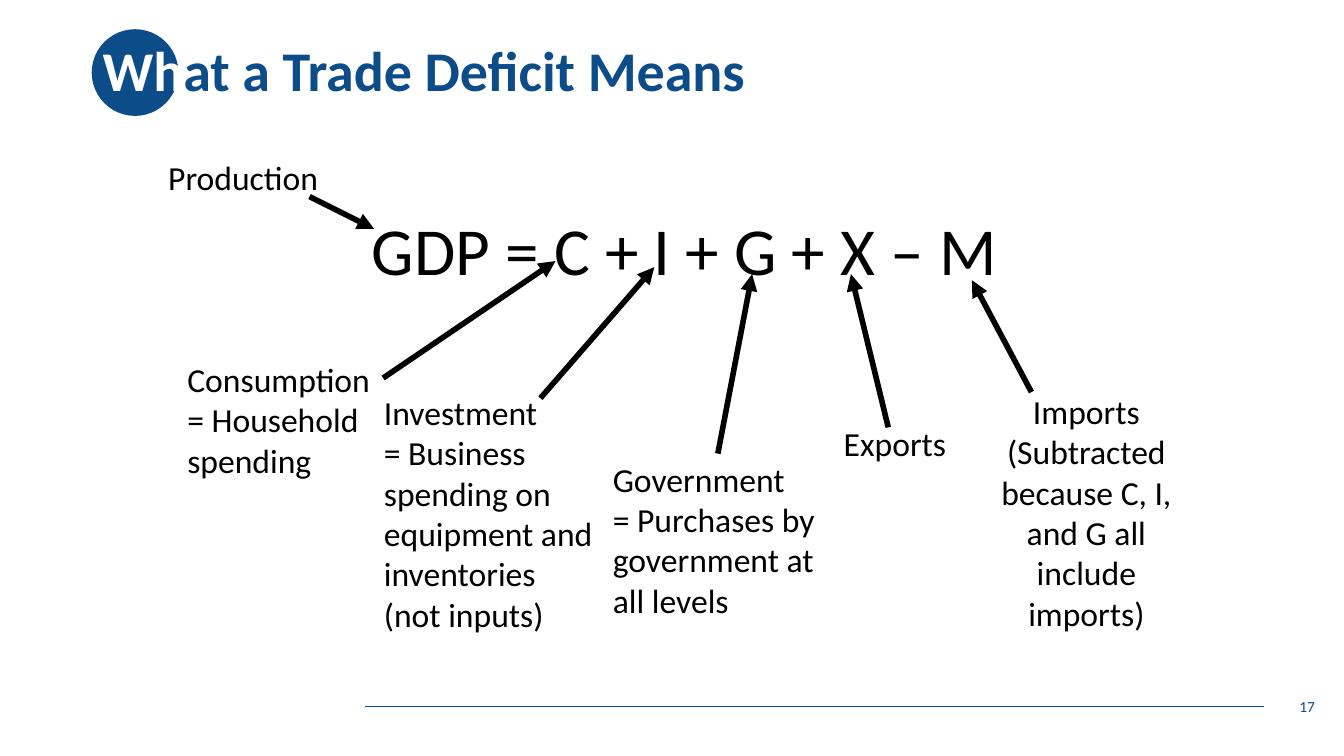
from lxml import etree
from pptx import Presentation
from pptx.dml.color import RGBColor
from pptx.enum.shapes import MSO_CONNECTOR, MSO_SHAPE
from pptx.enum.text import MSO_ANCHOR, PP_ALIGN
from pptx.oxml.ns import qn
from pptx.util import Inches, Pt

COLORS = {"navy": "0C4C88", "black": "000000", "white": "FFFFFF"}


def add_text(box, paragraphs, size, align=PP_ALIGN.LEFT, anchor=MSO_ANCHOR.TOP, wrap=True, bold=False):
    sp = s.shapes.add_textbox(*[Inches(v) for v in box])
    tf = sp.text_frame
    for name, value in {"word_wrap": wrap, "vertical_anchor": anchor}.items():
        setattr(tf, name, value)
    for i, runs in enumerate(paragraphs):
        p = tf.paragraphs[0] if i == 0 else tf.add_paragraph()
        p.alignment = align
        for text, color in runs:
            r = p.add_run()
            r.text = text
            for name, value in {"name": "Calibri", "size": Pt(size), "bold": bold}.items():
                setattr(r.font, name, value)
            r.font.color.rgb = RGBColor.from_string(COLORS[color])
    return tf


def add_line(start, end, color, width, arrow=False):
    points = [Inches(v) for v in (*start, *end)]
    sp = s.shapes.add_connector(MSO_CONNECTOR.STRAIGHT, *points)
    sp.line.color.rgb = RGBColor.from_string(COLORS[color])
    sp.line.width = Pt(width)
    if arrow:
        etree.SubElement(sp.line._get_or_add_ln(), qn("a:tailEnd"), type="triangle")
    etree.SubElement(sp._element.spPr, qn("a:effectLst"))


prs = Presentation()
prs.slide_width, prs.slide_height = Inches(13.33), Inches(7.5)
s = prs.slides.add_slide(prs.slide_layouts[6])

add_line((3.62, 7.01), (12.54, 7.01), "navy", 0.5)
circle = s.shapes.add_shape(MSO_SHAPE.OVAL, Inches(0.91), Inches(0.29), Inches(0.86), Inches(0.86))
circle.shadow.inherit = False
circle.fill.solid()
circle.fill.fore_color.rgb = RGBColor.from_string(COLORS["navy"])
circle.line.fill.background()

add_text((10.14, 6.81, 3, 0.4), [[("17", "navy")]], 11, PP_ALIGN.RIGHT, MSO_ANCHOR.MIDDLE)
add_text((3.59, 2.02, 6.46, 0.91), [[("GDP = C + I + G + X – M", "black")]], 48, wrap=False)

LEFT, CENTER = PP_ALIGN.LEFT, PP_ALIGN.CENTER
terms = [
    (1.57, 1.51, 0.5, LEFT, ["Production"], (3.07, 1.95), (3.71, 2.27)),
    (1.76, 3.51, 1.31, LEFT, ["Consumption", "= Household spending"], (3.8, 3.75), (5.51, 2.59)),
    (3.71, 3.84, 2.93, LEFT,
     ["Investment", "= Business spending on equipment and inventories (not inputs)"], (5.36, 3.95), (6.49, 2.65)),
    (5.98, 4.5, 1.72, LEFT,
     ["Government", "= Purchases by government at all levels"], (7.12, 4.5), (7.46, 2.72)),
    (8.27, 4.15, 0.5, LEFT, ["Exports"], (8.81, 4.24), (8.44, 2.72)),
    (9.64, 3.83, 2.52, CENTER,
     ["Imports", "(Subtracted because C, I, and G all include imports)"], (10.23, 3.89), (9.64, 2.78)),
]
for left, top, height, align, lines, start, end in terms:
    add_text((left, top, 2.27, height), [[(line, "black")] for line in lines], 24, align)
    add_line(start, end, "black", 4, arrow=True)

title = [("Wh", "white"), ("at a Trade Deficit Means", "navy")]
tf = add_text((0.92, 0, 11.5, 1.45), [title], 40, anchor=MSO_ANCHOR.MIDDLE, bold=True)
tf.paragraphs[0].line_spacing = 0.9

prs.save("out.pptx")
